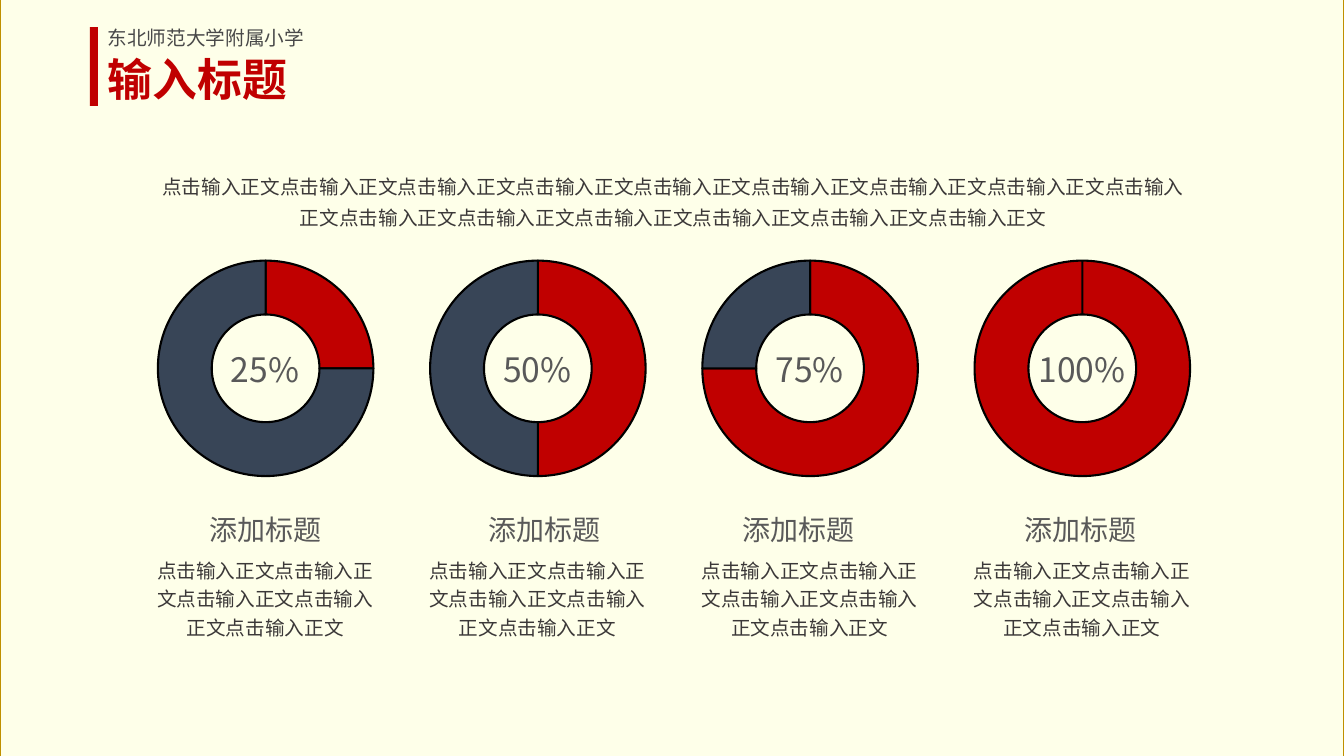
import pptx
import pptx.chart.data
import pptx.dml.color
import pptx.enum.chart
import pptx.enum.shapes
import pptx.enum.text
import pptx.oxml
import pptx.util
from pptx.util import Inches

RED, NAVY, TEAL, CREAM, GOLD = "C00000", "384557", "43C5AD", "FEFFE9", "BF9000"
GREY, DARK, BLACK = "595959", "3B3838", "000000"
CJK = "Noto Sans CJK SC"
ALIGN = pptx.enum.text.PP_ALIGN
RECT = pptx.enum.shapes.MSO_SHAPE.RECTANGLE
BODY = "点击输入正文"


def rgb(value):
    return pptx.dml.color.RGBColor.from_string(value)


def write(sp, text, size=14, color=DARK, font=CJK, bold=False,
          align=ALIGN.CENTER, spacing=None, wrap=True):
    tf = sp.text_frame
    tf.word_wrap = wrap
    tf.vertical_anchor = pptx.enum.text.MSO_ANCHOR.TOP
    p = tf.paragraphs[0]
    p.alignment = align
    if spacing:
        p.line_spacing = spacing
    r = p.add_run()
    r.text = text
    r.font.size = pptx.util.Pt(size)
    r.font.bold = bold
    r.font.color.rgb = rgb(color)
    r.font.name = font
    ea = r.font._element.makeelement(pptx.oxml.ns.qn("a:ea"), {"typeface": CJK})
    r.font._element.find(pptx.oxml.ns.qn("a:latin")).addnext(ea)


prs = pptx.Presentation()
prs.slide_width, prs.slide_height = Inches(13.33), Inches(7.5)
s = prs.slides.add_slide(prs.slide_layouts[5])

backdrop = s.shapes.add_shape(RECT, 0, Inches(-0.02), Inches(13.33), Inches(7.55))
backdrop.line.color.rgb = rgb(GOLD)
backdrop.line.width = pptx.util.Pt(1)
bar = s.shapes.add_shape(RECT, Inches(0.89), Inches(0.27), Inches(0.08), Inches(0.78))
bar.line.fill.background()
for sp, color in ((backdrop, CREAM), (bar, RED)):
    sp.shadow.inherit = False
    sp.fill.solid()
    sp.fill.fore_color.rgb = rgb(color)

# The title placeholder starts behind the backdrop, so bring it forward
title = s.shapes.title
backdrop.element.addnext(title.element)
title.left, title.top = Inches(0.97), Inches(0.46)
title.width, title.height = Inches(5.04), Inches(0.64)
write(title, "输入标题", size=32, color=RED, font="Lato", bold=True, align=ALIGN.LEFT)

school = s.shapes.add_textbox(Inches(0.97), Inches(0.21), Inches(3.55), Inches(0.34))
write(school, "东北师范大学附属小学", color="494949", align=ALIGN.LEFT)
intro = s.shapes.add_textbox(Inches(1.43), Inches(1.62), Inches(10.5), Inches(0.71))
write(intro, BODY * 15, spacing=1.3)

# Percentage, colour of the remainder, left edge of the heading
columns = [(25, NAVY, 1.97), (50, NAVY, 4.74), (75, NAVY, 7.26), (100, TEAL, 10.06)]
for i, (percent, rest_color, heading_left) in enumerate(columns):
    left = 1.42 + 2.7 * i

    data = pptx.chart.data.CategoryChartData()
    data.categories = ["1", "2"]
    data.add_series("Series 1", (percent, 100 - percent))
    chart = s.shapes.add_chart(
        pptx.enum.chart.XL_CHART_TYPE.DOUGHNUT,
        Inches(left), Inches(2.37), Inches(2.43), Inches(2.57), data).chart
    chart.has_legend = False
    chart.has_title = False
    chart.font.name = "Calibri"
    chart.font.size = pptx.util.Pt(10)
    chart.font.color.rgb = rgb("FFFFFF")
    plot = chart.plots[0]
    plot.vary_by_categories = False
    plot._element.find(pptx.oxml.ns.qn("c:holeSize")).set("val", "75")
    for j, color in enumerate((RED, rest_color)):
        fmt = plot.series[0].points[j].format
        fmt.fill.solid()
        fmt.fill.fore_color.rgb = rgb(color)
        fmt.line.color.rgb = rgb(BLACK)
        fmt.line.width = pptx.util.Pt(1.5)

    # Fix the ring's place inside the chart frame
    area = plot._element.getparent()
    for old in area.findall(pptx.oxml.ns.qn("c:layout")):
        area.remove(old)
    settings = (("layoutTarget", "inner"), ("xMode", "edge"), ("yMode", "edge"),
                ("x", 0.06), ("y", 0.08), ("w", 0.88), ("h", 0.84))
    area.insert(0, pptx.oxml.parse_xml(
        "<c:layout %s><c:manualLayout>%s</c:manualLayout></c:layout>" % (
            pptx.oxml.ns.nsdecls("c"),
            "".join(f'<c:{tag} val="{val}"/>' for tag, val in settings))))

    label = s.shapes.add_textbox(Inches(left + 0.36), Inches(3.41), Inches(1.7), Inches(0.5))
    write(label, f"{percent}%", size=24, color=GREY)
    heading = s.shapes.add_textbox(
        Inches(heading_left), Inches(5.04), Inches(1.32), Inches(0.44))
    write(heading, "添加标题", size=20, color=GREY, wrap=False)
    body = s.shapes.add_textbox(Inches(left), Inches(5.45), Inches(2.42), Inches(1.23))
    write(body, BODY * 5, spacing=1.2)

prs.save("out.pptx")
